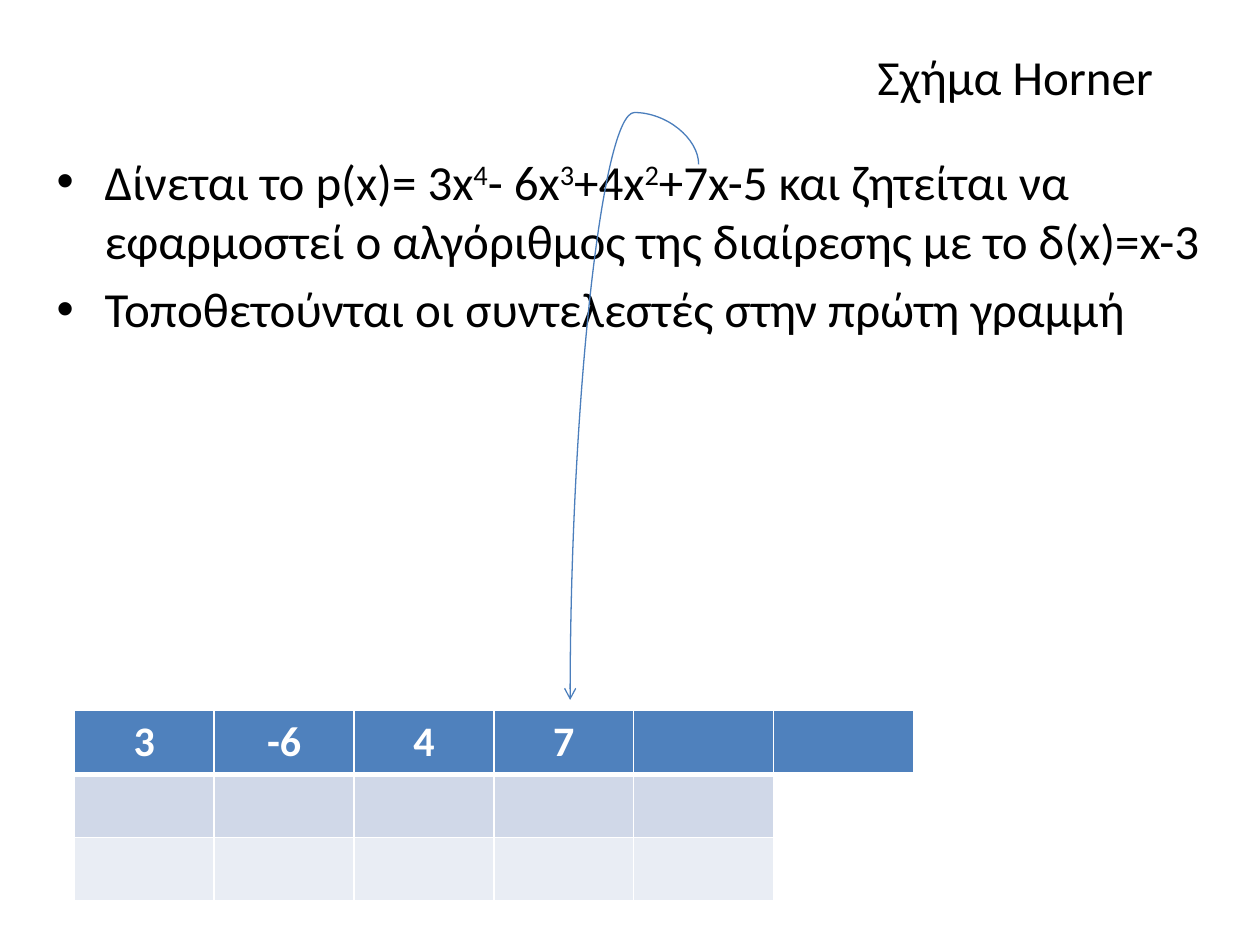
import pptx
import pptx.util
import pptx.dml.color
import pptx.enum.shapes
import pptx.enum.text
import pptx.oxml
import pptx.oxml.ns
from lxml import etree

Inches, Pt = pptx.util.Inches, pptx.util.Pt
qn = pptx.oxml.ns.qn
ALIGN = pptx.enum.text.PP_ALIGN

TITLE = "Σχήμα Horner"
BULLETS = [
    [("Δίνεται το p(x)= 3x", 0), ("4", 30), ("- 6x", 0), ("3", 30), ("+4x", 0), ("2", 30),
     ("+7x-5 και ζητείται να εφαρμοστεί ο αλγόριθμος της διαίρεσης με το δ(x)=x-3", 0)],
    [("Τοποθετούνται οι συντελεστές στην πρώτη γραμμή", 0)],
]
ROWS = [
    ["3", "-6", "4", "7", "", ""],
    [""] * 6,
    [""] * 6,
]
COLORS = {"text": "000000", "white": "FFFFFF", "header": "4F81BD",
          "band1": "D0D8E8", "band2": "E9EDF4", "line": "4B7EBC"}
ROW_FILLS = ["header", "band1", "band2"]
FILLED_COLS = [6, 5, 5]
COL_W, ROW_H = 1.11, 0.5


def rgb(name):
    return pptx.dml.color.RGBColor.from_string(COLORS[name])


def add_text(p, text, size=28, color="text", bold=False, align=None, baseline=0):
    r = p.add_run()
    r.text = text
    r.font.name = "Calibri"
    r.font.size = Pt(size)
    r.font.bold = bold
    r.font.color.rgb = rgb(color)
    if baseline:
        r.font._element.set("baseline", str(baseline * 1000))
    if align is not None:
        p.alignment = align


def place(sp, left, top, width, height):
    sp.left, sp.top = Inches(left), Inches(top)
    sp.width, sp.height = Inches(width), Inches(height)


def set_borders(cell, **widths):
    tcPr = cell._tc.get_or_add_tcPr()
    for side, width in widths.items():
        ln = etree.SubElement(tcPr, qn(f"a:{side}"), w=str(Pt(width)))
        fill = etree.SubElement(ln, qn("a:solidFill"))
        etree.SubElement(fill, qn("a:srgbClr"), val=COLORS["white"])


prs = pptx.Presentation()
prs.slide_width, prs.slide_height = Inches(10), Inches(7.5)
s = prs.slides.add_slide(prs.slide_layouts[1])

body = s.placeholders[1]
place(body, 0.35, 1.15, 9.29, 4.41)
tf = body.text_frame
for i, runs in enumerate(BULLETS):
    p = tf.paragraphs[0] if i == 0 else tf.add_paragraph()
    pPr = p._p.get_or_add_pPr()
    pPr.set("marL", str(Inches(0.38)))
    pPr.set("indent", str(-Inches(0.38)))
    for text, baseline in runs:
        add_text(p, text, baseline=baseline)

title = s.shapes.title
place(title, 0.75, 0.29, 8.5, 0.63)
add_text(title.text_frame.paragraphs[0], TITLE, align=ALIGN.RIGHT)

table = s.shapes.add_table(len(ROWS), len(ROWS[0]), Inches(0.59), Inches(5.64),
                           Inches(COL_W * len(ROWS[0])), Inches(ROW_H * len(ROWS))).table
for col in table.columns:
    col.width = Inches(COL_W)
for i, row in enumerate(ROWS):
    table.rows[i].height = Inches(ROW_H)
    for j, text in enumerate(row):
        cell = table.cell(i, j)
        set_borders(cell, lnL=1, lnR=1, lnT=3 if i == 1 else 1, lnB=3 if i == 0 else 1)
        if j < FILLED_COLS[i]:
            cell.fill.solid()
            cell.fill.fore_color.rgb = rgb(ROW_FILLS[i])
        else:
            cell.fill.background()
        if text:
            add_text(cell.text_frame.paragraphs[0], text, size=24, color="white",
                     bold=True, align=ALIGN.CENTER)

arrow = s.shapes.add_connector(pptx.enum.shapes.MSO_CONNECTOR.CURVE, Inches(2.91), Inches(2.92),
                               Inches(7.16), Inches(3.94))
arrow.line.color.rgb = rgb("line")
arrow.line.width = Pt(0.75)
spPr = arrow._element.spPr
spPr.find(qn("a:xfrm")).set("rot", str(90 * 60000))
geom = spPr.find(qn("a:prstGeom"))
avLst = geom.find(qn("a:avLst"))
if avLst is None:
    avLst = etree.SubElement(geom, qn("a:avLst"))
etree.SubElement(avLst, qn("a:gd"), name="adj1", fmla="val -9700")
etree.SubElement(spPr.find(qn("a:ln")), qn("a:tailEnd"), type="arrow")
etree.SubElement(spPr, qn("a:effectLst"))

prs.save("out.pptx")
